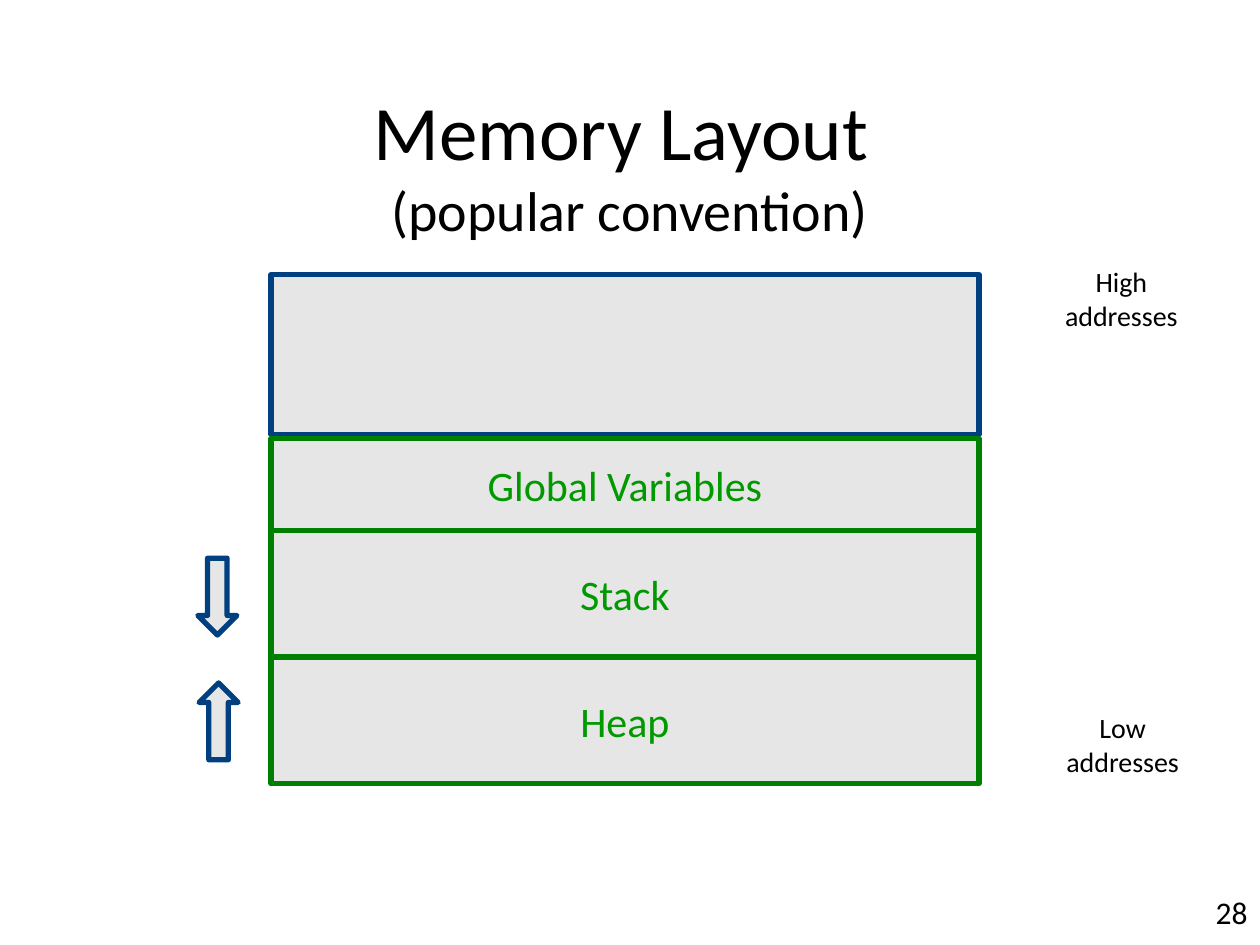
from pptx import Presentation
from pptx.dml.color import RGBColor
from pptx.enum.shapes import MSO_SHAPE as Shape
from pptx.enum.text import MSO_ANCHOR as Anchor, PP_ALIGN as Align
from pptx.util import Inches, Pt

BLACK = RGBColor(0x00, 0x00, 0x00)
GREY = RGBColor(0xE6, 0xE6, 0xE6)
NAVY = RGBColor(0x00, 0x40, 0x80)
GREEN = RGBColor(0x00, 0x80, 0x00)
LABEL_GREEN = RGBColor(0x00, 0x99, 0x00)
FONT = "Calibri"

TITLE = "Memory Layout \v(popular convention)"
TITLE_SIZES = (44, 32)
PAGE_NUMBER = "28"

# Memory regions from high to low: label, top, height, outline
REGION_LEFT, REGION_WIDTH = 2.15, 5.62
REGIONS = [
    ("", 2.18, 1.27, NAVY),
    ("Global Variables", 3.48, 0.74, GREEN),
    ("Stack", 4.21, 1, GREEN),
    ("Heap", 5.22, 1, GREEN),
]
# Growth directions: shape, left, top
GROWTH_ARROWS = [(Shape.DOWN_ARROW, 1.57, 4.43), (Shape.UP_ARROW, 1.58, 5.42)]
ARROW_SIZE = (0.31, 0.61)
# Address labels: text, left, top
ADDRESSES = [("High\naddresses", 8.23, 2.05), ("Low\naddresses", 8.24, 5.59)]
ADDRESS_SIZE = (1.34, 0.64)


def format_text(frame, sizes, color, align):
    """Style every run; sizes are used in turn within a paragraph."""
    for para in frame.paragraphs:
        para.alignment = align
        for index, span in enumerate(para.runs):
            span.font.name = FONT
            span.font.size = Pt(sizes[index % len(sizes)])
            span.font.color.rgb = color


def add_outlined(page, kind, place, outline):
    shape = page.shapes.add_shape(kind, *map(Inches, place))
    shape.shadow.inherit = False
    shape.fill.solid()
    shape.fill.fore_color.rgb = GREY
    shape.line.color.rgb = outline
    shape.line.width = Pt(3)
    return shape


def add_label(page, text, place, size, align):
    box = page.shapes.add_textbox(*map(Inches, place))
    box.text_frame.word_wrap = True
    box.text_frame.text = text
    format_text(box.text_frame, (size,), BLACK, align)


def main():
    deck = Presentation()
    deck.slide_width, deck.slide_height = Inches(10), Inches(7.5)
    page = deck.slides.add_slide(deck.slide_layouts[5])

    title = page.shapes.title
    title.left, title.top = Inches(0.75), Inches(0.67)
    title.width, title.height = Inches(8.5), Inches(1.25)
    title.text_frame.text = TITLE
    title.text_frame.vertical_anchor = Anchor.MIDDLE
    format_text(title.text_frame, TITLE_SIZES, BLACK, Align.CENTER)

    add_label(page, PAGE_NUMBER, (7.92, 7.04, 2.08, 0.3), 18, Align.RIGHT)

    for label, top, height, outline in REGIONS:
        place = (REGION_LEFT, top, REGION_WIDTH, height)
        region = add_outlined(page, Shape.RECTANGLE, place, outline)
        if label:
            frame = region.text_frame
            frame.text = label
            frame.word_wrap = False
            frame.vertical_anchor = Anchor.MIDDLE
            format_text(frame, (24,), LABEL_GREEN, Align.CENTER)

    for kind, left, top in GROWTH_ARROWS:
        add_outlined(page, kind, (left, top, *ARROW_SIZE), NAVY)

    for text, left, top in ADDRESSES:
        add_label(page, text, (left, top, *ADDRESS_SIZE), 16, Align.CENTER)

    deck.save("out.pptx")


if __name__ == "__main__":
    main()
